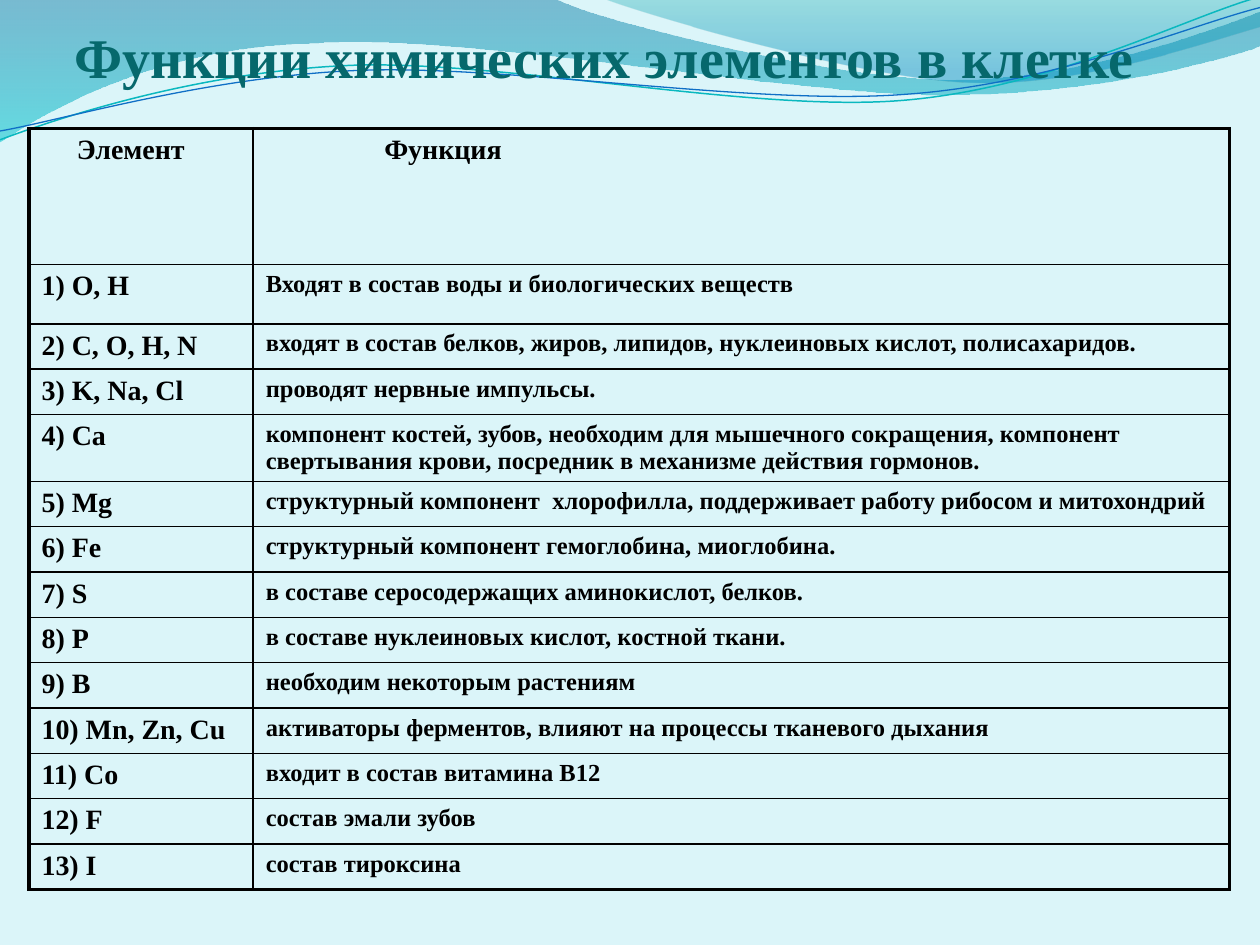
from dataclasses import dataclass

from lxml.etree import SubElement
from pptx import Presentation
from pptx.dml.color import RGBColor
from pptx.enum.text import MSO_ANCHOR, MSO_AUTO_SIZE, PP_ALIGN
from pptx.oxml.ns import qn
from pptx.util import Inches, Pt

FONT = "Times New Roman"
PALE_BLUE = RGBColor(0xDB, 0xF5, 0xF9)
DARK_TEAL = RGBColor(0x06, 0x68, 0x6C)
BLACK = RGBColor(0, 0, 0)
OCEAN = RGBColor(0x00, 0x74, 0xA1)
AQUA = RGBColor(0x00, 0xC6, 0xCF)
TEAL = RGBColor(0x00, 0xA1, 0xA9)
AZURE = RGBColor(0x00, 0x8B, 0xBF)
TURQUOISE = RGBColor(0x0A, 0xB8, 0xBF)
BLUE = RGBColor(0x0F, 0x6F, 0xC6)

THICK, THIN = 2.25, 1

Point = tuple[float, float]


@dataclass
class Stop:
    position: float
    color: RGBColor
    opacity: int


@dataclass
class Wave:
    """Segments hold one point for a line, three for a Bezier curve."""
    start: Point
    segments: list[list[Point]]
    stops: tuple[Stop, ...] = ()
    line_color: RGBColor | None = None
    line_width: float = 0


WAVES = [
    Wave((0, 0), [
        [(4.4, -0.01)],
        [(4.76, 0.17), (6.64, 0.63), (7.58, 0.63)],
        [(8.53, 0.63), (9.58, 0.26), (10, 0.09)],
        [(10.01, 0.36)],
        [(9.83, 0.44), (8.7, 0.76), (7.46, 0.75)],
        [(6.22, 0.75), (3.82, 0.28), (2.57, 0.34)],
        [(1.29, 0.36), (0.46, 0.83), (-0.01, 1.13)],
        [(0, 0)],
    ], stops=(Stop(0, OCEAN, 45), Stop(1, AQUA, 55))),
    Wave((4.79, -0.01), [
        [(5.09, 0.11), (6.82, 0.62), (7.69, 0.65)],
        [(8.56, 0.69), (9.61, 0.32), (10, 0.21)],
        [(10, 0)],
        [(4.79, -0.01)],
    ], stops=(Stop(0, TEAL, 30), Stop(0.8, AZURE, 45))),
    Wave((0, 1.11), [
        [(0.48, 0.93), (1.58, 0.57), (2.77, 0.52)],
        [(3.95, 0.47), (5.93, 0.89), (7.13, 0.8)],
        [(8.33, 0.71), (9.38, 0.15), (9.98, -0.02)],
    ], line_color=TURQUOISE, line_width=0.85),
    Wave((0, 1.04), [
        [(0.47, 0.96), (1.64, 0.61), (2.83, 0.56)],
        [(4.03, 0.51), (5.97, 0.84), (7.17, 0.75)],
        [(8.36, 0.67), (9.41, 0.21), (10, 0.06)],
    ], line_color=BLUE, line_width=0.75),
]


@dataclass
class Row:
    element: str
    function: str
    height: float = 0.36


HEADER = Row("Элемент", "Функция", 1.08)
HEADER_INDENTS = (0.28, 0.94)
ROWS = [
    HEADER,
    Row("1) О, Н", "Входят в состав воды и биологических веществ", 0.47),
    Row("2) С, О, Н, N", "входят в состав белков, жиров, липидов, нуклеиновых кислот, полисахаридов."),
    Row("3) K, Na, Cl", "проводят нервные импульсы."),
    Row("4) Ca", "компонент костей, зубов, необходим для мышечного сокращения, компонент "
        "свертывания крови, посредник в механизме действия гормонов.", 0.53),
    Row("5) Mg", "структурный компонент  хлорофилла, поддерживает работу рибосом и митохондрий"),
    Row("6) Fe", "структурный компонент гемоглобина, миоглобина."),
    Row("7) S", "в составе серосодержащих аминокислот, белков."),
    Row("8) P", "в составе нуклеиновых кислот, костной ткани."),
    Row("9) B", "необходим некоторым растениям"),
    Row("10) Mn, Zn, Cu", "активаторы ферментов, влияют на процессы тканевого дыхания"),
    Row("11) Co", "входит в состав витамина В12"),
    Row("12) F", "состав эмали зубов"),
    Row("13) I", "состав тироксина"),
]
COLUMN_WIDTHS = (1.78, 7.75)


def bend_segments(shape, segments: list[list[Point]]) -> None:
    """Merge each three straight lines of a curved segment into one Bezier curve."""
    lines = iter(list(shape.element.iter(qn("a:lnTo"))))
    for segment in segments:
        pieces = [next(lines) for _ in segment]
        if len(pieces) == 3:
            outline = pieces[0].getparent()
            curve = SubElement(outline, qn("a:cubicBezTo"))
            outline.replace(pieces[0], curve)
            for piece in pieces:
                curve.append(piece[0])
            for piece in pieces[1:]:
                outline.remove(piece)


def draw_wave(page, wave: Wave) -> None:
    points = [(Inches(x), Inches(y))
              for x, y in [wave.start, *(p for segment in wave.segments for p in segment)]]
    builder = page.shapes.build_freeform(*points[0])
    builder.add_line_segments(points[1:], close=bool(wave.stops))
    shape = builder.convert_to_shape()
    bend_segments(shape, wave.segments)
    shape.shadow.inherit = False
    if wave.stops:
        shape.line.fill.background()
        shape.fill.gradient()
        shape.fill.gradient_angle = 270
        for target, stop in zip(shape.fill.gradient_stops, wave.stops):
            target.position = stop.position
            target.color.rgb = stop.color
        for color, stop in zip(shape.element.spPr.iter(qn("a:srgbClr")), wave.stops):
            SubElement(color, qn("a:alpha"), val=str(stop.opacity * 1000))
    else:
        shape.fill.background()
        shape.line.color.rgb = wave.line_color
        shape.line.width = Pt(wave.line_width)


def write(frame, text: str, *, size: float, color: RGBColor = BLACK,
          align=PP_ALIGN.LEFT, indent: float = 0) -> None:
    para = frame.paragraphs[0]
    para.alignment = align
    if indent:
        para._p.get_or_add_pPr().set("marL", str(Inches(indent)))
    span = para.add_run()
    span.text = text
    span.font.name = FONT
    span.font.size = Pt(size)
    span.font.bold = True
    span.font.color.rgb = color


def set_borders(cell, **widths: float) -> None:
    """Clear the fill too, as borders must precede it in the cell."""
    properties = cell._tc.get_or_add_tcPr()
    for side, width in widths.items():
        line = SubElement(properties, qn(f"a:ln{side}"), w=str(Pt(width)))
        SubElement(SubElement(line, qn("a:solidFill")), qn("a:srgbClr"), val=str(BLACK))
    cell.fill.background()


def draw_table(page) -> None:
    table = page.shapes.add_table(
        len(ROWS), len(COLUMN_WIDTHS), Inches(0.23), Inches(1.02),
        Inches(sum(COLUMN_WIDTHS)), Inches(sum(row.height for row in ROWS))).table
    table.first_row = table.horz_banding = False
    for column, width in zip(table.columns, COLUMN_WIDTHS):
        column.width = Inches(width)
    for index, row in enumerate(ROWS):
        table.rows[index].height = Inches(row.height)
        for column, text in enumerate((row.element, row.function)):
            cell = table.cell(index, column)
            is_header = row is HEADER
            write(cell.text_frame, text, size=16 if is_header or column == 0 else 14,
                  indent=HEADER_INDENTS[column] if is_header else 0)
            set_borders(cell,
                        L=THICK if column == 0 else THIN,
                        R=THICK if column == 1 else THIN,
                        T=THICK if is_header else THIN,
                        B=THICK if index == len(ROWS) - 1 else THIN)


def place_title(page) -> None:
    title = page.shapes.title
    title.left, title.top = Inches(0.16), Inches(0.32)
    title.width, title.height = Inches(9.27), Inches(0.39)
    frame = title.text_frame
    frame.word_wrap = True
    frame.auto_size = MSO_AUTO_SIZE.NONE
    frame.vertical_anchor = MSO_ANCHOR.BOTTOM
    frame.margin_left = frame.margin_right = frame.margin_bottom = 0
    frame.margin_top = Inches(0.05)
    write(frame, "Функции химических элементов в клетке", size=32,
          color=DARK_TEAL, align=PP_ALIGN.CENTER)
    title.element.getparent().append(title.element)  # in front of the waves


def main() -> None:
    deck = Presentation()
    deck.slide_width, deck.slide_height = Inches(10), Inches(7.5)
    page = deck.slides.add_slide(deck.slide_layouts[5])
    page.background.fill.solid()
    page.background.fill.fore_color.rgb = PALE_BLUE
    for wave in WAVES:
        draw_wave(page, wave)
    place_title(page)
    draw_table(page)
    deck.save("out.pptx")


if __name__ == "__main__":
    main()
